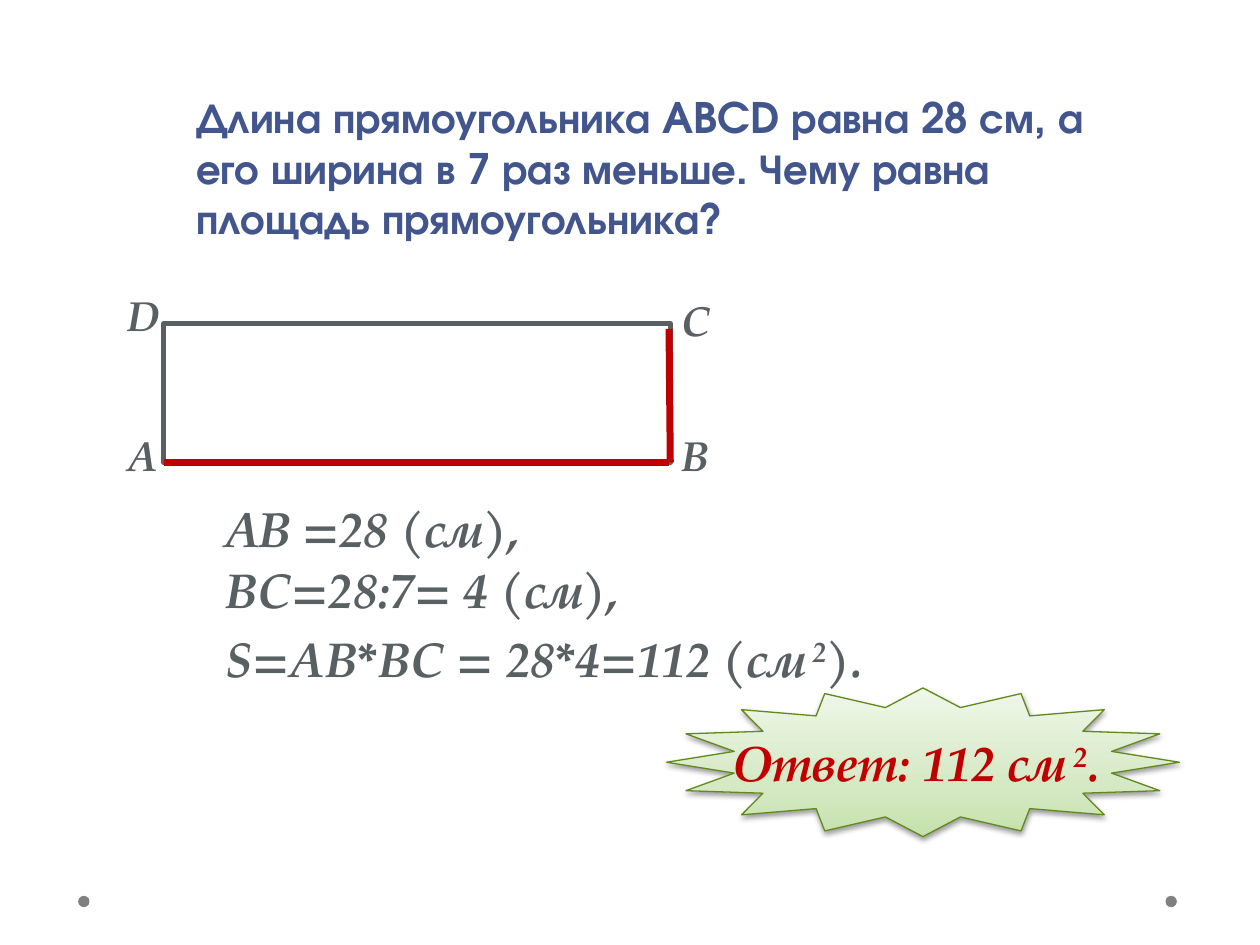
import lxml.etree
import pptx
import pptx.dml.color
import pptx.enum.shapes
import pptx.enum.text
import pptx.oxml
import pptx.oxml.ns
import pptx.util

Inches = pptx.util.Inches
Pt = pptx.util.Pt
SHAPE = pptx.enum.shapes.MSO_SHAPE
qn = pptx.oxml.ns.qn
HEADING, BODY = "TeX Gyre Adventor", "TeX Gyre Pagella"
GRAY, RED = "586064", "C00000"


def color(value):
    return pptx.dml.color.RGBColor.from_string(value)


def write(frame, parts, size, font, ink, italic=True):
    """Fill the first paragraph; every second part is a superscript."""
    paragraph = frame.paragraphs[0]
    for index, part in enumerate(parts):
        run = paragraph.add_run()
        run.text = part
        if index % 2:
            run.font._element.set("baseline", "30000")
    paragraph.font.size = Pt(size)
    paragraph.font.name = font
    paragraph.font.bold = True
    paragraph.font.italic = italic
    paragraph.font.color.rgb = color(ink)
    return paragraph


deck = pptx.Presentation()
deck.slide_width, deck.slide_height = Inches(10), Inches(7.5)
slide = deck.slides.add_slide(deck.slide_layouts[6])
shapes = slide.shapes

# Corner dots
for left in (0.62, 9.25):
    dot = shapes.add_shape(SHAPE.OVAL, Inches(left), Inches(7.11), Inches(0.09), Inches(0.09))
    dot.shadow.inherit = False
    dot.fill.solid()
    dot.fill.fore_color.rgb = color("808080")
    dot.line.fill.background()

# Rectangle ABCD
rectangle = shapes.add_shape(SHAPE.RECTANGLE, Inches(1.3), Inches(2.57), Inches(4.02), Inches(1.1))
rectangle.shadow.inherit = False
rectangle.fill.background()
rectangle.line.color.rgb = color(GRAY)
rectangle.line.width = Pt(3)

# Problem, vertex letters and solution steps
problem = ("Длина прямоугольника ABCD равна 28 см, а его ширина в 7 раз меньше. "
           "Чему равна площадь прямоугольника?")
texts = [
    (1.46, 0.68, 7.46, 1.34, [problem], 24, HEADING, "42568D", False),
    (0.91, 2.25, 0.39, 0.63, ["D"], 24, BODY, GRAY, True),
    (5.31, 2.29, 0.39, 0.63, ["C"], 24, BODY, GRAY, True),
    (0.91, 3.36, 0.39, 0.63, ["A"], 24, BODY, GRAY, True),
    (5.31, 3.36, 0.39, 0.63, ["B"], 24, BODY, GRAY, True),
    (1.69, 3.91, 3.76, 0.55, ["АВ =28 (см),"], 28, BODY, GRAY, True),
    (1.69, 4.39, 3.76, 0.55, ["BC=28:7= 4 (см),"], 28, BODY, GRAY, True),
    (1.69, 4.94, 5.64, 1.02, ["S=AB*BC = 28*4=112 (см", " 2", ")."], 28, BODY, GRAY, True),
]
for left, top, width, height, parts, size, font, ink, italic in texts:
    box = shapes.add_textbox(Inches(left), Inches(top), Inches(width), Inches(height))
    box.text_frame.word_wrap = True
    write(box.text_frame, parts, size, font, ink, italic)

# Answer star
answer = shapes.add_shape(SHAPE.STAR_16_POINT, Inches(5.29), Inches(5.46), Inches(4.07), Inches(1.18))
answer.line.color.rgb = color("62891C")
answer.line.width = Pt(0.75)
answer.fill.gradient()
answer.fill.gradient_angle = 90
stops = answer._element.spPr.find(".//" + qn("a:gsLst"))
for stop in list(stops):
    stops.remove(stop)
for position, tint in ((0, "C5E1AB"), (35, "D6E9C5"), (100, "EFF7E9")):
    stop = lxml.etree.SubElement(stops, qn("a:gs"), pos=str(position * 1000))
    lxml.etree.SubElement(stop, qn("a:srgbClr"), val=tint)

# Soft shadow below the star
answer.shadow.inherit = False
effects = answer._element.spPr.find(qn("a:effectLst"))
shadow = lxml.etree.SubElement(effects, qn("a:outerShdw"), blurRad=str(Pt(3.1)), dist=str(Pt(1.6)),
                               dir="5400000", rotWithShape="0")
shade = lxml.etree.SubElement(shadow, qn("a:srgbClr"), val="000000")
lxml.etree.SubElement(shade, qn("a:alpha"), val="38000")

answer.text_frame.word_wrap = False
answer.text_frame.vertical_anchor = pptx.enum.text.MSO_ANCHOR.MIDDLE
result = write(answer.text_frame, ["Ответ: 112 см", " 2", ". "], 28, BODY, RED)
result.alignment = pptx.enum.text.PP_ALIGN.CENTER

# Highlighted sides AB and BC
for x1, y1, x2, y2 in ((1.3, 3.67, 5.31, 3.67), (5.31, 2.61, 5.32, 3.67)):
    side = shapes.add_connector(pptx.enum.shapes.MSO_CONNECTOR.STRAIGHT,
                                Inches(x1), Inches(y1), Inches(x2), Inches(y2))
    side.line.color.rgb = color(RED)
    side.line.width = Pt(4)
    lxml.etree.SubElement(side._element.spPr, qn("a:effectLst"))

deck.save("out.pptx")
